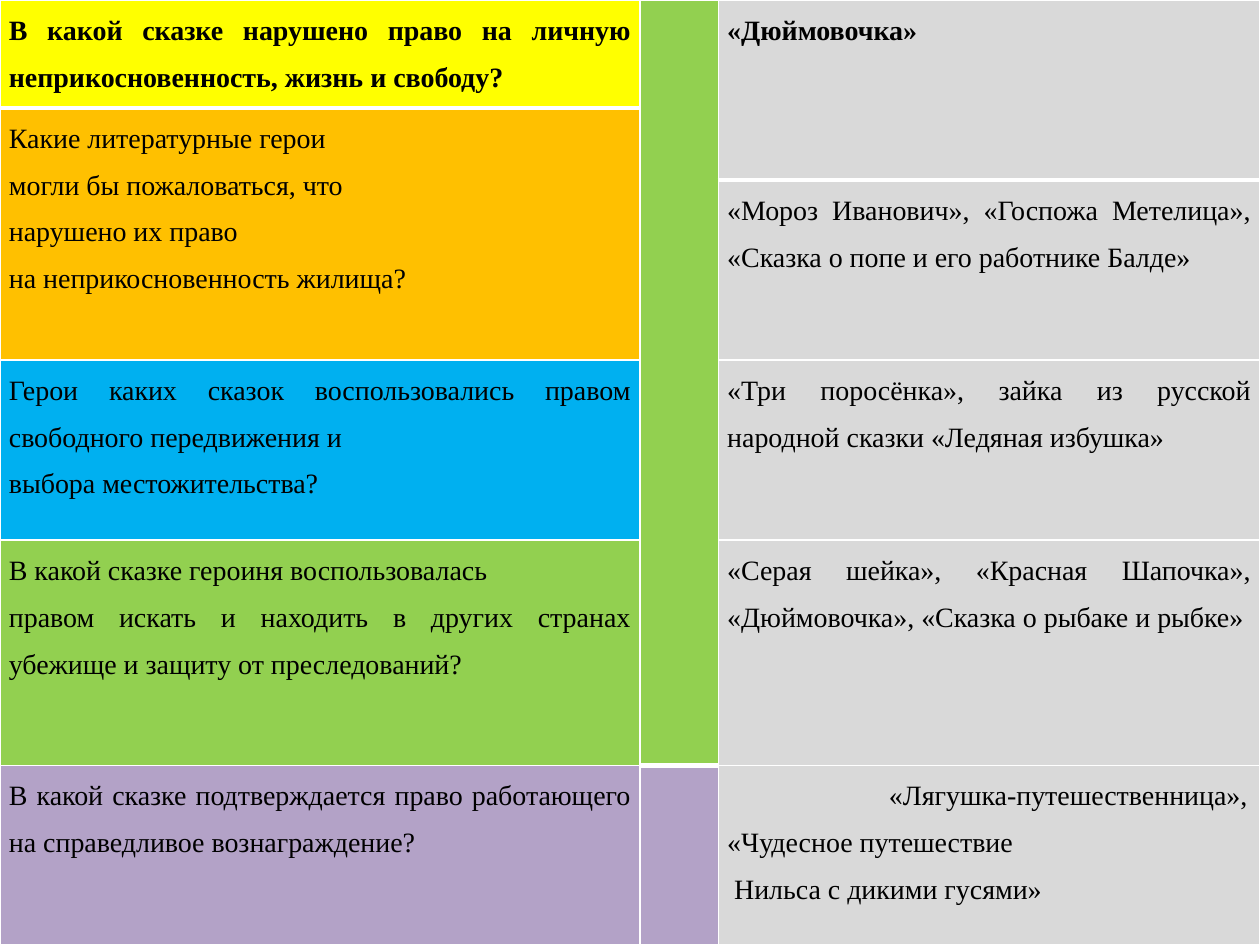
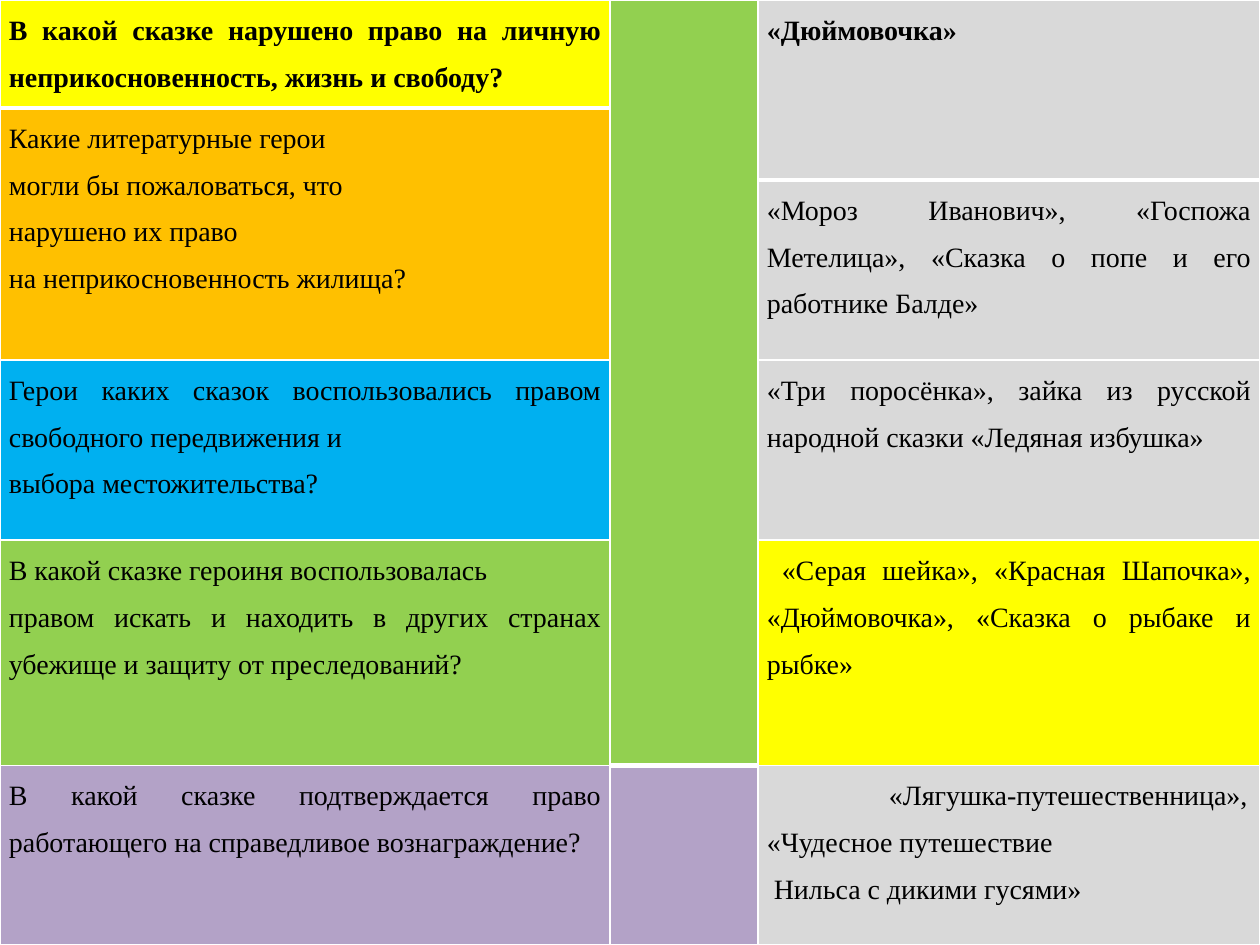
from collections import namedtuple

from lxml.etree import SubElement
from pptx import Presentation
from pptx.dml.color import RGBColor as Rgb
from pptx.enum.text import PP_ALIGN as Align
from pptx.oxml.ns import qn
from pptx.util import Cm, Pt

COLORS = {
    "yellow": "FFFF00",
    "orange": "FFC000",
    "blue": "00B0F0",
    "green": "92D050",
    "purple": "B3A2C7",
    "gray": "D9D9D9",
    "border": "FFFFFF",
    "text": "000000",
}
FONT = "Times New Roman"
FONT_SIZE = Pt(16)
THIN, THICK = Pt(1), Pt(3)
SIDE_MARGIN = 0.18
FROG_TITLE_WIDTH = 7.3
SLIDE_BOX = (0, 0, 25.4, 19.05)
ROW_HEIGHTS = (2.18, 1.45, 3.63, 3.63, 4.54, 3.62)

Line = namedtuple("Line", "text indent", defaults=(0,))
Block = namedtuple("Block", "row column span fill lines")

QUESTIONS = [
    Block(0, 0, 1, "yellow", [
        Line("В какой сказке нарушено право на личную неприкосновенность, жизнь и свободу?")]),
    Block(1, 0, 2, "orange", [
        Line("Какие литературные герои"),
        Line("могли бы пожаловаться, что"),
        Line("нарушено их право"),
        Line("на неприкосновенность жилища?")]),
    Block(3, 0, 1, "blue", [
        Line("Герои каких сказок воспользовались правом свободного передвижения и"),
        Line("выбора местожительства?")]),
    Block(4, 0, 1, "green", [
        Line("В какой сказке героиня воспользовалась"),
        Line("правом искать и находить в других странах убежище и защиту от преследований?")]),
    Block(5, 0, 1, "purple", [
        Line("В какой сказке подтверждается право работающего на справедливое вознаграждение?")]),
]
DIVIDERS = [Block(0, 1, 5, "green", []), Block(5, 1, 1, "purple", [])]


def answer_blocks(column_width, refuge_fill, refuge_indent):
    """Return the answers, with the last title pushed to the right edge of its column."""
    frog_indent = column_width - 2 * SIDE_MARGIN - FROG_TITLE_WIDTH
    return [
        Block(0, 2, 2, "gray", [Line("«Дюймовочка»")]),
        Block(2, 2, 1, "gray", [
            Line("«Мороз Иванович», «Госпожа Метелица», «Сказка о попе и его работнике Балде»")]),
        Block(3, 2, 1, "gray", [
            Line("«Три поросёнка», зайка из русской народной сказки «Ледяная избушка»")]),
        Block(4, 2, 1, refuge_fill, [
            Line("«Серая шейка», «Красная Шапочка», «Дюймовочка», «Сказка о рыбаке и рыбке»",
                 refuge_indent)]),
        Block(5, 2, 1, "gray", [
            Line("«Лягушка-путешественница», «Чудесное путешествие", frog_indent),
            Line("Нильса с дикими гусями»", 0.14)]),
    ]


def set_borders(cell, top, bottom):
    """Draw solid borders of the given top and bottom widths around a cell."""
    properties = cell._tc.get_or_add_tcPr()
    for side, width in (("L", THIN), ("R", THIN), ("T", top), ("B", bottom)):
        line = SubElement(properties, qn(f"a:ln{side}"), w=str(width))
        fill = SubElement(line, qn("a:solidFill"))
        SubElement(fill, qn("a:srgbClr"), val=COLORS["border"])


def write_lines(cell, lines, bold):
    """Write justified paragraphs into a cell."""
    cell.margin_left = cell.margin_right = Cm(SIDE_MARGIN)
    cell.margin_top = cell.margin_bottom = 0
    frame = cell.text_frame
    for index, line in enumerate(lines):
        paragraph = frame.add_paragraph() if index else frame.paragraphs[0]
        paragraph.text = line.text
        paragraph.alignment = Align.JUSTIFY
        paragraph.line_spacing = 1.5
        if line.indent:
            paragraph._p.get_or_add_pPr().set("indent", str(Cm(line.indent)))
        font = paragraph.font
        font.name, font.size, font.bold = FONT, FONT_SIZE, bold
        font.color.rgb = Rgb.from_string(COLORS["text"])


def add_block(table, block, follows_header):
    """Merge, border, fill and write one block of the table."""
    is_header = block.row == 0
    rows = range(block.row, block.row + block.span)
    cells = [table.cell(row, block.column) for row in rows]
    if block.span > 1:
        cells[0].merge(cells[-1])
    for cell in cells:
        set_borders(cell, THICK if follows_header else THIN, THICK if is_header else THIN)
        cell.fill.solid()
        cell.fill.fore_color.rgb = Rgb.from_string(COLORS[block.fill])
    write_lines(cells[0], block.lines, is_header)


def add_quiz_table(slide, box, column_widths, blocks):
    """Place the table of questions and answers in a box."""
    frame = slide.shapes.add_table(
        len(ROW_HEIGHTS), len(column_widths), *(Cm(length) for length in box))
    table = frame.table
    table.first_row = table.horz_banding = False
    for column, width in zip(table.columns, column_widths):
        column.width = Cm(width)
    for row, height in zip(table.rows, ROW_HEIGHTS):
        row.height = Cm(height)
    header_ends = {(block.span, block.column) for block in blocks if block.row == 0}
    for block in blocks:
        add_block(table, block, (block.row, block.column) in header_ends)


def add_quiz_slide(presentation, column_widths, refuge_fill="gray", refuge_indent=0):
    """Add a slide filled by the quiz table."""
    slide = presentation.slides.add_slide(presentation.slide_layouts[6])
    answers = answer_blocks(column_widths[-1], refuge_fill, refuge_indent)
    add_quiz_table(slide, SLIDE_BOX, column_widths, QUESTIONS + DIVIDERS + answers)


def main():
    """Build and save the presentation."""
    presentation = Presentation()
    presentation.slide_width, presentation.slide_height = (Cm(size) for size in SLIDE_BOX[2:])
    add_quiz_slide(presentation, (12.9, 1.58, 10.92))
    add_quiz_slide(presentation, (12.3, 2.98, 10.12), "yellow", 0.3)
    presentation.save("out.pptx")


if __name__ == "__main__":
    main()
